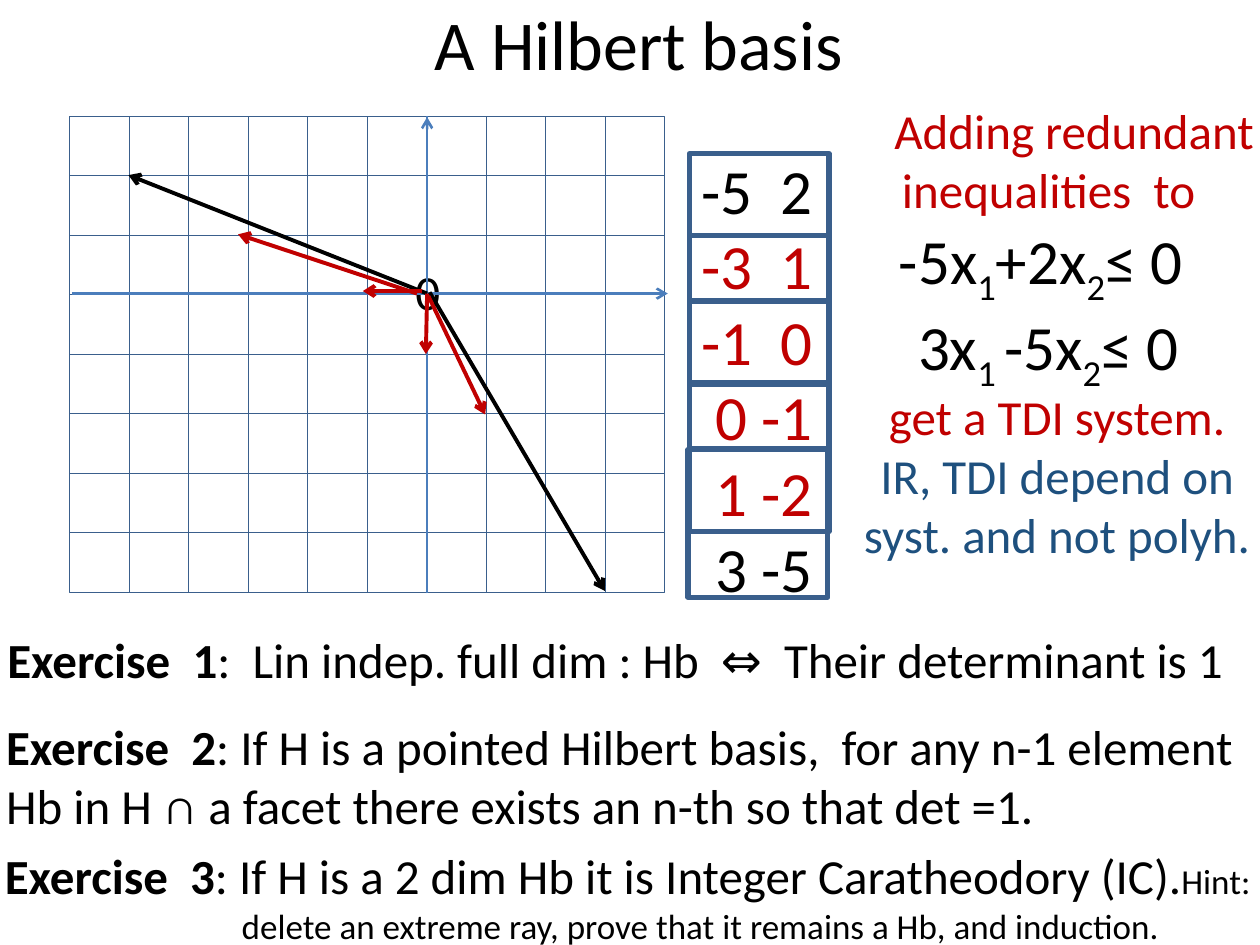
"""Build the slide on a Hilbert basis: grid with vectors, inequalities and three exercises."""
from dataclasses import dataclass

from lxml import etree
from pptx import Presentation
from pptx.dml.color import RGBColor
from pptx.enum.shapes import MSO_CONNECTOR, MSO_SHAPE
from pptx.enum.text import MSO_ANCHOR, MSO_AUTO_SIZE, PP_ALIGN
from pptx.oxml.ns import qn
from pptx.util import Inches, Pt

LEFT, CENTER, RIGHT = PP_ALIGN.LEFT, PP_ALIGN.CENTER, PP_ALIGN.RIGHT
MIDDLE = MSO_ANCHOR.MIDDLE
GROW = MSO_AUTO_SIZE.SHAPE_TO_FIT_TEXT
RECTANGLE = MSO_SHAPE.RECTANGLE
STRAIGHT = MSO_CONNECTOR.STRAIGHT


@dataclass(frozen=True)
class Theme:
    font: str = "Calibri"
    black: RGBColor = RGBColor.from_string("000000")
    red: RGBColor = RGBColor.from_string("C00000")
    navy: RGBColor = RGBColor.from_string("1E507E")
    outline: RGBColor = RGBColor.from_string("3A5F8C")
    axis: RGBColor = RGBColor.from_string("4B7EBC")
    title: int = 40
    formula: int = 36
    body: int = 28
    hint: int = 20


THEME = Theme()


def write(frame, paragraphs, size):
    """Fill a frame from (alignment, indent, colour, runs), runs being (text, font changes)."""
    for number, (alignment, indent, color, runs) in enumerate(paragraphs):
        line = frame.add_paragraph() if number else frame.paragraphs[0]
        line.alignment = alignment
        if indent:
            line._p.get_or_add_pPr().set("marL", str(Inches(indent)))
        for words, changes in runs:
            run = line.add_run()
            run.text = words
            run.font.color.rgb = color
            look = {"name": THEME.font, "size": Pt(size), "bold": False, **changes}
            subscript = look.pop("subscript", False)
            for name, value in look.items():
                setattr(run.font, name, value)
            if subscript:
                run.font._element.set("baseline", "-25000")


def draw_line(start, end, color, width, arrow=True):
    """Draw a straight line, with an arrowhead at its end unless told otherwise."""
    connector = slide.shapes.add_connector(STRAIGHT, *map(Inches, start + end))
    connector.line.color.rgb = color
    connector.line.width = Pt(width)
    if arrow:
        etree.SubElement(connector.line._get_or_add_ln(), qn("a:tailEnd"), type="arrow")
    etree.SubElement(connector._element.spPr, qn("a:effectLst"))


prs = Presentation()
prs.slide_width, prs.slide_height = Inches(10), Inches(7.5)
slide = prs.slides.add_slide(prs.slide_layouts[5])

title = slide.shapes.title
for name, value in {"left": 0.57, "top": -0.29, "width": 9, "height": 1.25}.items():
    setattr(title, name, Inches(value))
title.text_frame.vertical_anchor = MIDDLE
write(title.text_frame, [(CENTER, 0, THEME.black, [("A Hilbert basis", {})])], THEME.title)

COLUMNS, ROWS = 10, 8
CELL = 4.725 / COLUMNS
grid = slide.shapes.add_group_shape()
grid_cells = [
    (grid.shapes, 0.55 + column * CELL, 0.92 + row * CELL, CELL, CELL, 0.25)
    for row in range(ROWS) for column in range(COLUMNS)
]
vector_frames = [
    (slide.shapes, left, top, 1.11, 1.17, 3)
    for left, top in [(5.47, 1.22), (5.47, 1.87), (5.47, 2.39), (5.47, 3.05), (5.46, 3.57)]
]
for owner, left, top, width, height, weight in grid_cells + vector_frames:
    box = owner.add_shape(RECTANGLE, *map(Inches, (left, top, width, height)))
    box.fill.background()
    box.line.color.rgb = THEME.outline
    box.line.width = Pt(weight)
    box.shadow.inherit = False

vectors = [("-5  2", THEME.black), ("-3  1", THEME.red), ("-1  0", THEME.red),
           ("0 -1", THEME.red), ("1 -2", THEME.red), ("3 -5", THEME.black)]
bold, sub = {"bold": True}, {"subscript": True}
small = {"size": Pt(THEME.hint)}

texts = [
    ((-0.04, 4.95, 9.96, 0.57), THEME.body, [
        (LEFT, 0, THEME.black, [
            ("Exercise  1", bold),
            (":  Lin indep. full dim : Hb  ⇔  Their determinant is 1", {})])]),
    ((3.16, 2.03, 0.47, 0.57), THEME.body, [(CENTER, 0, THEME.black, [("0", {})])]),
    ((5.38, 1.15, 1.17, 4.27), THEME.formula, [
        (RIGHT, 0, color, [(vector, {})]) for vector, color in vectors]),
    ((-0.05, 5.64, 10.25, 1.04), THEME.body, [
        (LEFT, 0, THEME.black, [
            ("Exercise  2", bold),
            (": If H is a pointed Hilbert basis,  for any n-1 element "
             "Hb in H ∩ a facet there exists an n-th so that det =1.", {})])]),
    ((-0.06, 6.66, 10.33, 0.91), THEME.body, [
        (LEFT, 0, THEME.black, [
            ("Exercise  3", bold),
            (": If H is a 2 dim Hb it is Integer Caratheodory (IC).", {}),
            ("Hint:", small)]),
        (LEFT, 1.88, THEME.black, [
            ("delete an extreme ray, prove that it remains a Hb, and induction.", small)])]),
    ((6.97, 0.75, 3.11, 1.04), THEME.body, [
        (CENTER, 0, THEME.red, [("Adding redundant", {})]),
        (LEFT, 0.09, THEME.red, [("inequalities  to", {})])]),
    ((5.87, 1.71, 3.78, 2.26), THEME.formula, [
        (CENTER, 1, THEME.black, [
            ("-5x", {}), ("1", sub), ("+2x", {}), ("2", sub), ("≤ 0", {})]),
        (CENTER, 1.12, THEME.black, [
            ("3x", {}), ("1 ", sub), ("-5x", {}), ("2", sub), ("≤ 0", {})])]),
    ((6.66, 3.02, 3.46, 1.51), THEME.body, [
        (CENTER, 0, THEME.red, [("get a TDI system.", {})]),
        (CENTER, 0, THEME.navy, [("IR, TDI depend on", {})]),
        (CENTER, 0, THEME.navy, [("syst. and not polyh.", {})])]),
]
for place, size, paragraphs in texts:
    frame = slide.shapes.add_textbox(*map(Inches, place)).text_frame
    frame.word_wrap = True
    frame.auto_size = GROW
    write(frame, paragraphs, size)

draw_line((3.39, 0.92), (3.39, 1.86), THEME.axis, 0.75, arrow=False)
for start, end in [((3.39, 4.71), (3.39, 0.93)), ((0.57, 2.33), (5.3, 2.33))]:
    draw_line(start, end, THEME.axis, 1.5)
for start, end, color in [
    ((3.39, 2.33), (1.02, 1.39), THEME.black),
    ((3.41, 2.32), (4.8, 4.69), THEME.black),
    ((3.31, 2.33), (1.89, 1.86), THEME.red),
    ((3.35, 2.31), (2.88, 2.31), THEME.red),
    ((3.39, 2.33), (3.38, 2.81), THEME.red),
    ((3.4, 2.35), (3.85, 3.29), THEME.red),
]:
    draw_line(start, end, color, 2.25)

prs.save("out.pptx")
